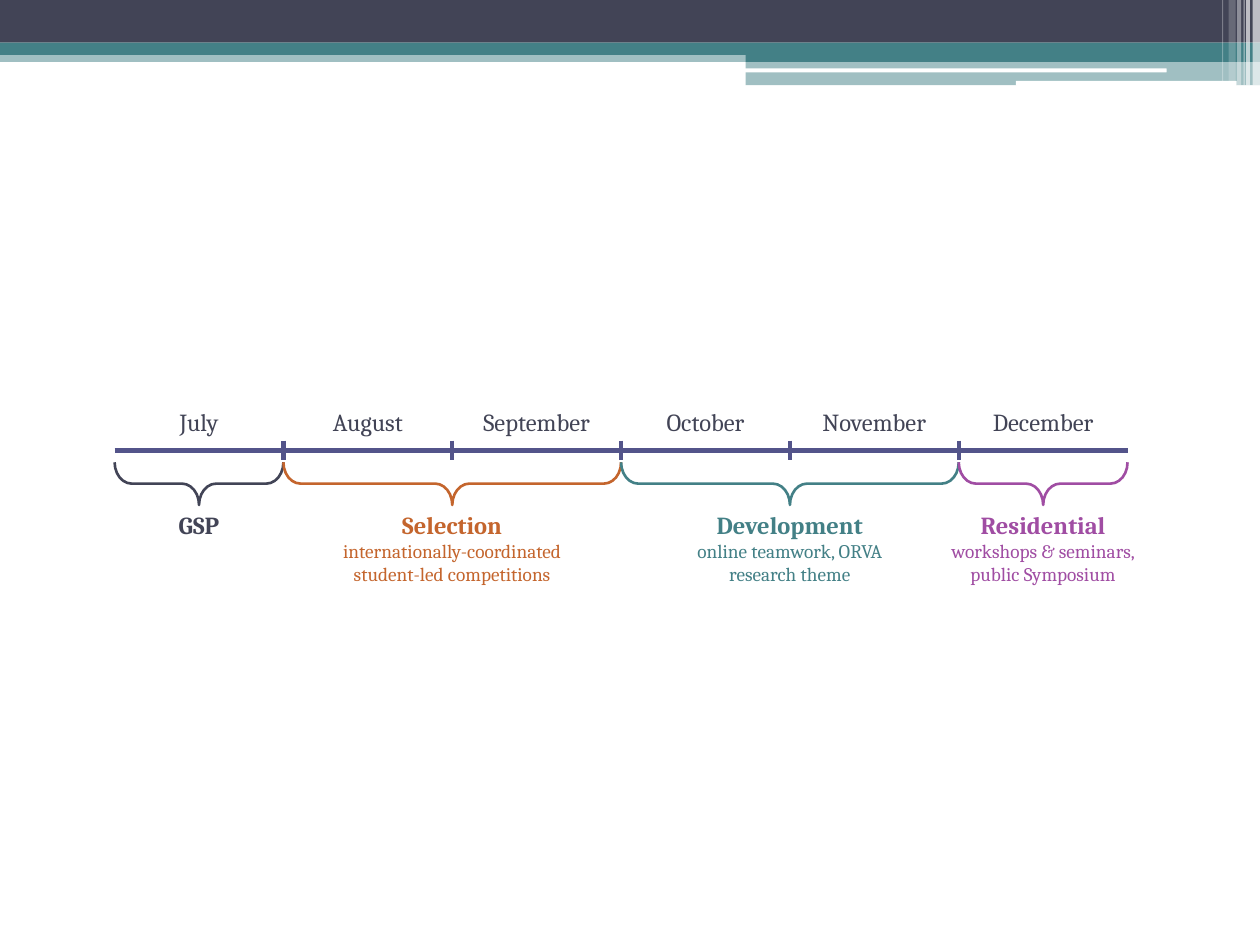
from collections import namedtuple
from dataclasses import dataclass

from lxml import etree
from pptx import Presentation
from pptx import util as u
from pptx.dml.color import RGBColor
from pptx.enum import shapes, text
from pptx.oxml import ns

Box = namedtuple("Box", "left top width height")
Phase = namedtuple("Phase", "title detail first months color text_width")


@dataclass(frozen=True)
class Theme:
    font: str = "Cambria"
    dark: str = "424456"
    teal: str = "438086"
    axis: str = "53548A"
    orange: str = "C4652D"
    purple: str = "A04DA3"
    white: str = "FFFFFF"
    label_size: int = 14
    detail_size: int = 11
    axis_width: float = 2.5
    brace_width: float = 1.5


THEME = Theme()
MONTHS = ("July", "August", "September", "October", "November", "December")
PHASES = (
    Phase("GSP", "", 0, 1, THEME.dark, 3.4),
    Phase("Selection", "internationally-coordinated student-led competitions",
          1, 2, THEME.orange, 5.54),
    Phase("Development", "online teamwork, ORVA research theme",
          3, 2, THEME.teal, 4.5),
    Phase("Residential", "workshops & seminars, public Symposium",
          5, 1, THEME.purple, 4.8),
)
RECTANGLE = shapes.MSO_SHAPE.RECTANGLE
ROUNDED = shapes.MSO_SHAPE.ROUNDED_RECTANGLE
HEADER_BANDS = (
    (RECTANGLE, Box(0, 1.02, 25.4, 0.23), THEME.teal, 50),
    (RECTANGLE, Box(0, 0, 25.4, 0.86), THEME.dark, 100),
    (RECTANGLE, Box(0, 0.86, 25.4, 0.25), THEME.teal, 100),
    (RECTANGLE, Box(15.03, 0.99, 10.37, 0.26), THEME.teal, 100),
    (RECTANGLE, Box(15.03, 1.25, 10.37, 0.47), THEME.teal, 50),
    (ROUNDED, Box(15.01, 1.38, 8.51, 0.08), THEME.white, 100),
    (ROUNDED, Box(20.48, 1.63, 4.45, 0.1), THEME.white, 100),
)
STRIPES = (
    (25.25, 0.15, 1.73, 65), (25.12, 0.08, 1.73, 65),
    (25.07, 0.02, 1.73, 60), (24.94, 0.08, 1.73, 40),
    (24.77, 0.14, 1.63, 20), (24.64, 0.02, 1.63, 30),
)


def apply_format(target, values):
    for name, value in values.items():
        setattr(target, name, value)


def add_block(slide, kind, box, color, opacity):
    shape = slide.shapes.add_shape(kind, *map(u.Cm, box))
    shape.shadow.inherit = False
    shape.line.fill.background()
    shape.fill.solid()
    shape.fill.fore_color.rgb = RGBColor.from_string(color)
    if opacity < 100:
        color_element = shape.fill._xPr.find(".//" + ns.qn("a:srgbClr"))
        etree.SubElement(color_element, ns.qn("a:alpha"), val=str(opacity * 1000))


def add_line(slide, start, end):
    line = slide.shapes.add_connector(
        shapes.MSO_CONNECTOR.STRAIGHT, *map(u.Cm, (*start, *end)))
    line.line.color.rgb = RGBColor.from_string(THEME.axis)
    line.line.width = u.Pt(THEME.axis_width)
    etree.SubElement(line._element.spPr, ns.qn("a:effectLst"))


def add_label(slide, box, lines, color):
    shape = slide.shapes.add_textbox(*map(u.Cm, box))
    frame = shape.text_frame
    apply_format(frame, {"word_wrap": True,
                         "auto_size": text.MSO_AUTO_SIZE.SHAPE_TO_FIT_TEXT})
    for index, (wording, size, bold) in enumerate(lines):
        paragraph = frame.add_paragraph() if index else frame.paragraphs[0]
        paragraph.alignment = text.PP_ALIGN.CENTER
        run = paragraph.add_run()
        run.text = wording
        apply_format(run.font, {"name": THEME.font, "size": u.Pt(size), "bold": bold})
        run.font.color.rgb = RGBColor.from_string(color)


def add_brace(slide, box, color):
    left = box.left + (box.width - box.height) / 2
    top = box.top + (box.height - box.width) / 2
    shape = slide.shapes.add_shape(
        shapes.MSO_SHAPE.RIGHT_BRACE,
        *map(u.Cm, (left, top, box.height, box.width)))
    shape.rotation = 90
    shape.adjustments[0] = 0.4
    shape.shadow.inherit = False
    shape.fill.background()
    shape.line.color.rgb = RGBColor.from_string(color)
    shape.line.width = u.Pt(THEME.brace_width)


def add_header(slide, box):
    stripes = [(RECTANGLE, Box(left, 0, width, height), THEME.white, opacity)
               for left, width, height, opacity in STRIPES]
    for kind, part, color, opacity in (*HEADER_BANDS, *stripes):
        placed = part._replace(left=box.left + part.left, top=box.top + part.top)
        add_block(slide, kind, placed, color, opacity)


def add_months(slide, box):
    month_width = box.width / len(MONTHS)
    axis = box.top + 1
    add_line(slide, (box.left, axis), (box.left + box.width, axis))
    for index, month in enumerate(MONTHS):
        left = box.left + index * month_width
        if index:
            add_line(slide, (left, axis - 0.2), (left, axis + 0.2))
        add_label(slide, Box(left, box.top, month_width, 0.86),
                  [(month, THEME.label_size, False)], THEME.dark)


def add_phases(slide, box):
    month_width = box.width / len(MONTHS)
    for phase in PHASES:
        left = box.left + phase.first * month_width
        width = phase.months * month_width
        add_brace(slide, Box(left, box.top, width, 0.86), phase.color)
        lines = [(phase.title, THEME.label_size, True)]
        if phase.detail:
            lines.append((phase.detail, THEME.detail_size, False))
        label_left = left + (width - phase.text_width) / 2
        add_label(slide, Box(label_left, box.top + 0.84, phase.text_width,
                             1.8 if phase.detail else 0.86), lines, phase.color)


def main():
    presentation = Presentation()
    apply_format(presentation, {"slide_width": u.Cm(25.4), "slide_height": u.Cm(19.05)})
    slide = presentation.slides.add_slide(presentation.slide_layouts[6])
    add_header(slide, Box(0, 0, 25.4, 1.73))
    add_months(slide, Box(2.31, 8.08, 20.42, 1.2))
    add_phases(slide, Box(2.31, 9.32, 20.42, 2.64))
    presentation.save("out.pptx")


if __name__ == "__main__":
    main()
